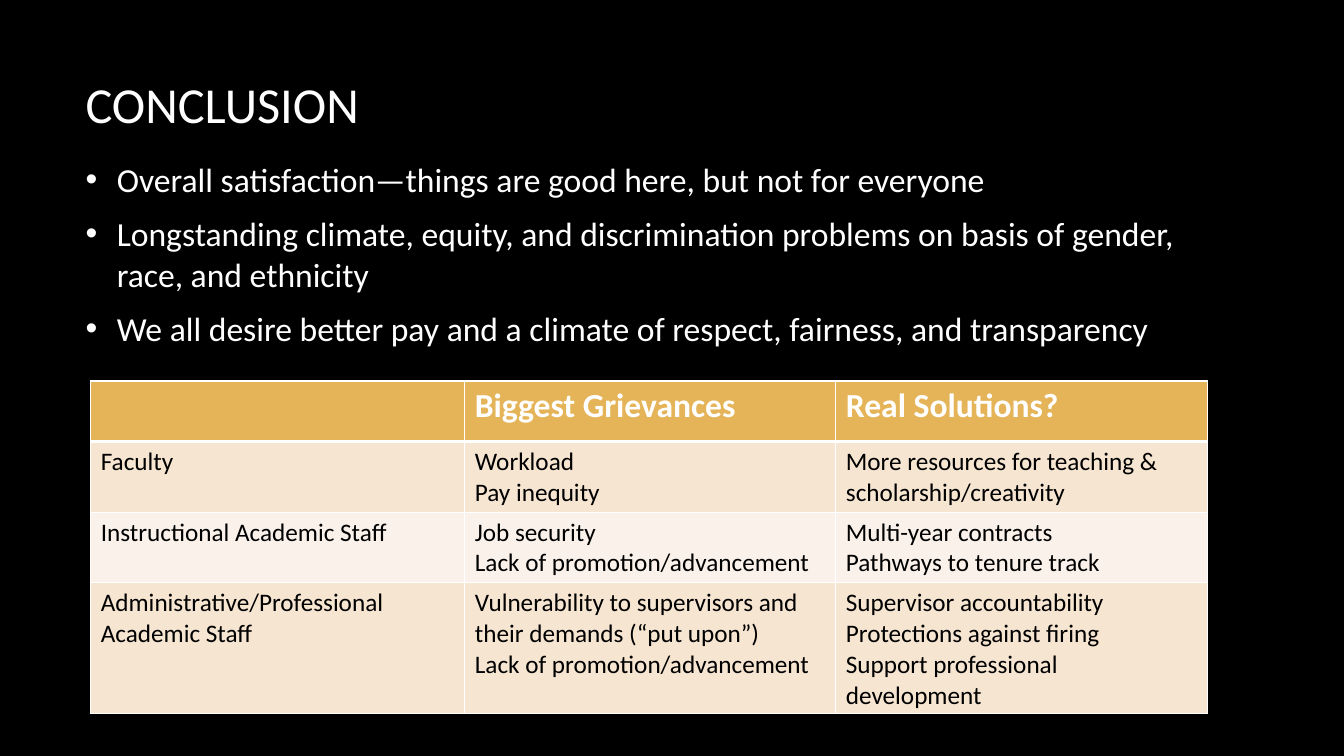
from dataclasses import dataclass

from lxml.etree import SubElement
from pptx import Presentation
from pptx.dml.color import RGBColor as RGB
from pptx.enum.text import MSO_ANCHOR as Anchor
from pptx.oxml.ns import qn
from pptx.util import Inches, Pt


@dataclass(frozen=True)
class Theme:
    font: str = "Calibri"
    back: str = "000000"
    light: str = "FFFFFF"
    dark: str = "000000"
    head: str = "E5B458"
    bands: tuple = ("F5E5D1", "FAF2EA")
    title: int = 36
    body: int = 24
    cell: int = 18


theme = Theme()


def write(frame, text, size, color, bold=False, after=0, bullet=False):
    """Fill a text frame, one paragraph for each line of text."""
    frame.word_wrap = True
    for i, line in enumerate(text.split("\n")):
        para = frame.paragraphs[0] if i == 0 else frame.add_paragraph()
        para.space_after = Pt(after)
        if bullet:
            props = para._p.get_or_add_pPr()
            props.set("marL", str(Inches(0.31)))
            props.set("indent", str(-Inches(0.31)))
            SubElement(props, qn("a:buFont"), typeface="Arial")
            SubElement(props, qn("a:buChar"), char="•")
        run = para.add_run()
        run.text = line
        font = run.font
        font.name, font.size, font.bold = theme.font, Pt(size), bold
        font.color.rgb = RGB.from_string(color)


def border(cell, **widths):
    """Draw cell edges, given as L, R, T and B in points."""
    props = cell._tc.get_or_add_tcPr()
    for side, width in widths.items():
        line = SubElement(props, qn(f"a:ln{side}"), w=str(Pt(width)))
        fill = SubElement(line, qn("a:solidFill"))
        SubElement(fill, qn("a:srgbClr"), val=theme.light)


deck = Presentation()
deck.slide_width, deck.slide_height = Inches(13.33), Inches(7.5)
slide = deck.slides.add_slide(deck.slide_layouts[6])
slide.background.fill.solid()
slide.background.fill.fore_color.rgb = RGB.from_string(theme.back)

points = """Overall satisfaction—things are good here, but not for everyone
Longstanding climate, equity, and discrimination problems on basis of gender, race, and ethnicity
We all desire better pay and a climate of respect, fairness, and transparency"""

boxes = [
    (0.67, 0.71, "CONCLUSION", dict(size=theme.title)),
    (1.15, 2.73, points, dict(size=theme.body, after=10, bullet=True)),
]
for top, height, text, style in boxes:
    box = slide.shapes.add_textbox(Inches(0.75), Inches(top), Inches(11.08), Inches(height))
    box.text_frame.vertical_anchor = Anchor.MIDDLE
    write(box.text_frame, text, color=theme.light, **style)

rows = [
    ("", "Biggest Grievances", "Real Solutions?"),
    ("Faculty", "Workload\nPay inequity",
     "More resources for teaching & scholarship/creativity"),
    ("Instructional Academic Staff", "Job security\nLack of promotion/advancement",
     "Multi-year contracts\nPathways to tenure track"),
    ("Administrative/Professional Academic Staff",
     "Vulnerability to supervisors and their demands (“put upon”)\nLack of promotion/advancement",
     "Supervisor accountability\nProtections against firing\nSupport professional development"),
]
widths = [3.71, 3.68, 3.69]
heights = [0.6, 0.7, 0.7, 1.3]

table = slide.shapes.add_table(
    len(rows), len(widths), Inches(0.9), Inches(3.78),
    Inches(sum(widths)), Inches(sum(heights))).table
table.horz_banding = False
for col, width in zip(table.columns, widths):
    col.width = Inches(width)
for r, (row, height) in enumerate(zip(rows, heights)):
    table.rows[r].height = Inches(height)
    head = r == 0
    shade = theme.head if head else theme.bands[(r - 1) % 2]
    for c, text in enumerate(row):
        cell = table.cell(r, c)
        border(cell, L=1, R=1, T=3 if r == 1 else 1, B=3 if head else 1)
        cell.fill.solid()
        cell.fill.fore_color.rgb = RGB.from_string(shade)
        if text:
            write(cell.text_frame, text, bold=head,
                  size=theme.body if head else theme.cell,
                  color=theme.light if head else theme.dark)

deck.save("out.pptx")
